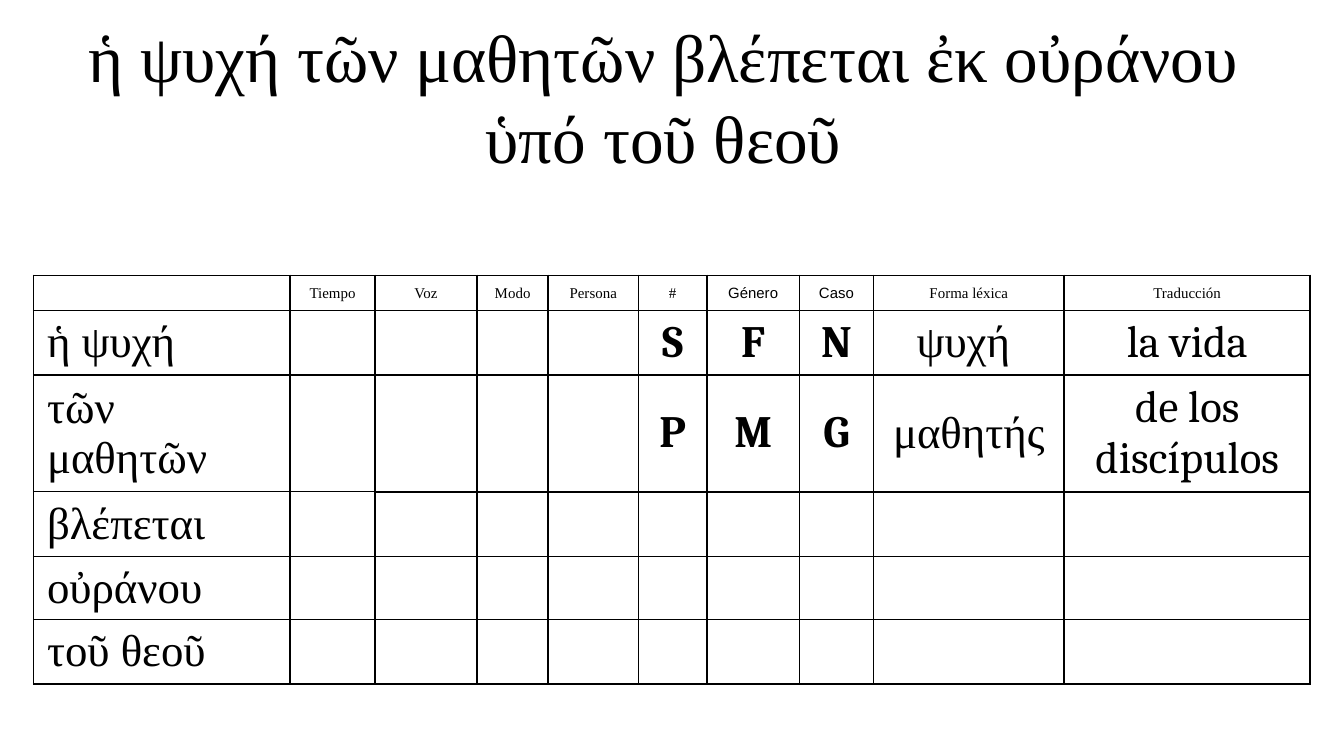
"""Build a slide with a Greek sentence and its grammatical parsing table."""
import pptx
import pptx.dml.color
import pptx.enum.text
import pptx.oxml.ns
import pptx.util
from lxml import etree
from pptx.util import Inches

BLACK = pptx.dml.color.RGBColor(0x00, 0x00, 0x00)
GREEK_FONT = "Times New Roman"
CENTER = pptx.enum.text.PP_ALIGN.CENTER
LEFT = pptx.enum.text.PP_ALIGN.LEFT
MIDDLE = pptx.enum.text.MSO_ANCHOR.MIDDLE


def add_text(paragraph, text, size, font_name, bold=False, align=CENTER):
    paragraph.alignment = align
    run = paragraph.add_run()
    run.text = text
    run.font.size = pptx.util.Pt(size)
    run.font.name = font_name
    run.font.bold = bold
    run.font.color.rgb = BLACK


def add_border(cell, side, width):
    properties = cell._tc.get_or_add_tcPr()
    line = etree.SubElement(properties, pptx.oxml.ns.qn(f"a:{side}"), w=str(pptx.util.Pt(width)))
    fill = etree.SubElement(line, pptx.oxml.ns.qn("a:solidFill"))
    etree.SubElement(fill, pptx.oxml.ns.qn("a:srgbClr"), val=str(BLACK))


presentation = pptx.Presentation()
presentation.slide_width = Inches(10)
presentation.slide_height = Inches(10 * 9 / 16)
slide = presentation.slides.add_slide(presentation.slide_layouts[5])

sentence = slide.shapes.title
sentence.left, sentence.top = Inches(0.17), Inches(0.06)
sentence.width, sentence.height = Inches(9.66), Inches(1.31)
sentence_frame = sentence.text_frame
sentence_frame.word_wrap = True
sentence_frame.auto_size = pptx.enum.text.MSO_AUTO_SIZE.NONE
sentence_frame.vertical_anchor = MIDDLE
add_text(sentence_frame.paragraphs[0], "ἡ ψυχή τῶν μαθητῶν βλέπεται ἐκ οὐράνου ", 36, GREEK_FONT)
add_text(sentence_frame.add_paragraph(), "ὑπό τοῦ θεοῦ ", 36, GREEK_FONT)

parsing_rows = [
    ["", "Tiempo", "Voz", "Modo", "Persona", "#", "Género", "Caso", "Forma léxica", "Traducción"],
    ["ἡ ψυχή", "", "", "", "", "S", "F", "N", "ψυχή ", "la vida"],
    ["τῶν μαθητῶν", "", "", "", "", "P", "M", "G", "μαθητής", "de los discípulos"],
    ["βλέπεται"] + [""] * 9,
    ["οὐράνου"] + [""] * 9,
    ["τοῦ θεοῦ"] + [""] * 9,
]
column_widths = [1.91, 0.63, 0.76, 0.53, 0.67, 0.51, 0.69, 0.55, 1.42, 1.83]
row_heights = [0.26, 0.48, 0.87, 0.48, 0.47, 0.48]

parsing = slide.shapes.add_table(
    len(row_heights), len(column_widths), Inches(0.25), Inches(2.05), Inches(9.5), Inches(3.04)
).table
for column, width in zip(parsing.columns, column_widths):
    column.width = Inches(width)
for row, height in zip(parsing.rows, row_heights):
    row.height = Inches(height)

for row_index, words in enumerate(parsing_rows):
    for column_index, word in enumerate(words):
        cell = parsing.cell(row_index, column_index)
        cell.vertical_anchor = MIDDLE
        cell.margin_left = cell.margin_right = Inches(0.1)
        cell.margin_top = cell.margin_bottom = Inches(0.04)
        is_header = row_index == 0
        is_code = not is_header and 5 <= column_index <= 7
        if is_header:
            font_name = "Arial" if word in ("Género", "Caso") else GREEK_FONT
        else:
            font_name = "Cambria" if is_code or column_index == 9 else GREEK_FONT
        paragraph = cell.text_frame.paragraphs[0]
        if word:
            align = LEFT if column_index == 0 else CENTER
            add_text(paragraph, word, 8 if is_header else 24, font_name, is_code, align)
        else:
            etree.SubElement(paragraph._p, pptx.oxml.ns.qn("a:endParaRPr"), sz="800")
        inner_width = 0.75 if column_index < 2 else 1
        add_border(cell, "lnL", 1)
        add_border(cell, "lnR", 1)
        add_border(cell, "lnT", 1 if is_header else inner_width)
        add_border(cell, "lnB", inner_width)
        cell.fill.background()

presentation.save("out.pptx")
